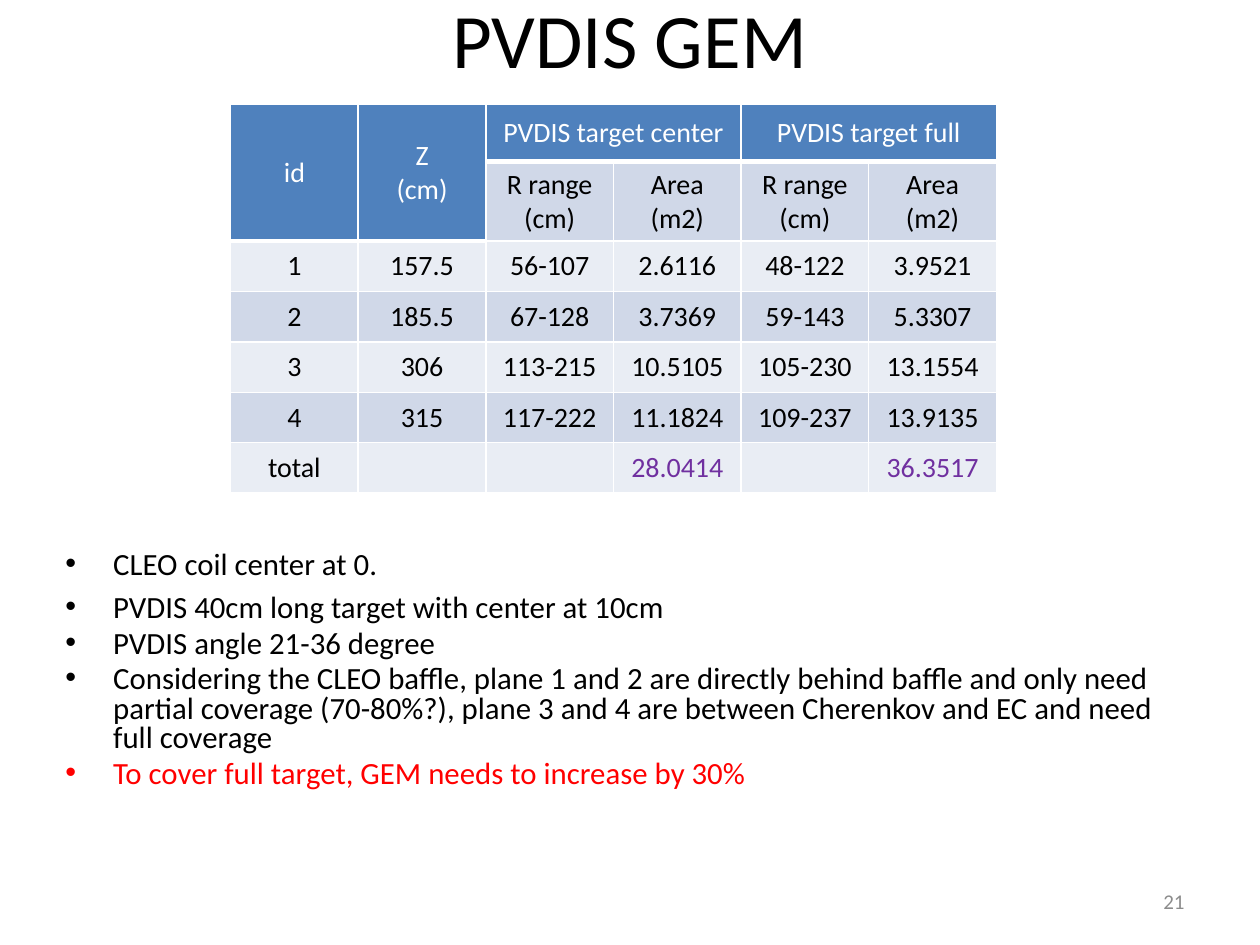
from lxml import etree
from pptx import Presentation
from pptx.dml.color import RGBColor
from pptx.enum import text
from pptx.oxml import ns
from pptx.util import Inches, Pt

BLACK = RGBColor(0, 0, 0)
WHITE = RGBColor(255, 255, 255)
BLUE = RGBColor(0x4F, 0x81, 0xBD)
DARK = RGBColor(0xD0, 0xD8, 0xE8)
LIGHT = RGBColor(0xE9, 0xED, 0xF4)
PURPLE = RGBColor(0x70, 0x30, 0xA0)
RED = RGBColor(255, 0, 0)
GREY = RGBColor(0x8C, 0x8C, 0x8C)
MID = text.MSO_ANCHOR.MIDDLE
ALIGN = text.PP_ALIGN


def write(frame, lines, size, color, align):
    """Fill a text frame with one paragraph per line."""
    for i, line in enumerate(lines):
        para = frame.paragraphs[0] if i == 0 else frame.add_paragraph()
        para.alignment = align
        run = para.add_run()
        run.text = line
        run.font.name = "Calibri"
        run.font.size = Pt(size)
        run.font.bold = False
        run.font.color.rgb = color


def add_box(left, top, width, height, anchor):
    box = slide.shapes.add_textbox(Inches(left), Inches(top), Inches(width), Inches(height))
    frame = box.text_frame
    frame.word_wrap = True
    frame.vertical_anchor = anchor
    return frame


prs = Presentation()
prs.slide_width, prs.slide_height = Inches(10), Inches(7.5)
slide = prs.slides.add_slide(prs.slide_layouts[6])

title = add_box(0.5, -0.33, 9, 1.25, MID)
write(title, ["PVDIS GEM"], 44, BLACK, ALIGN.CENTER)

# Table of detector planes
units = ["R range\n(cm)", "Area\n(m2)"]
rows = [
    ["id", "Z\n(cm)", "PVDIS target center", "", "PVDIS target full", ""],
    ["", ""] + units * 2,
    ["1", "157.5", "56-107", "2.6116", "48-122", "3.9521"],
    ["2", "185.5", "67-128", "3.7369", "59-143", "5.3307"],
    ["3", "306", "113-215", "10.5105", "105-230", "13.1554"],
    ["4", "315", "117-222", "11.1824", "109-237", "13.9135"],
    ["total", "", "", "28.0414", "", "36.3517"],
]
heights = [0.45, 0.63] + [0.4] * 5
table = slide.shapes.add_table(
    len(rows), 6, Inches(1.83), Inches(0.83), Inches(6.08), Inches(sum(heights))
).table
for col in table.columns:
    col.width = Inches(6.08 / 6)
for row, height in zip(table.rows, heights):
    row.height = Inches(height)

for r, row in enumerate(rows):
    for c, words in enumerate(row):
        cell = table.cell(r, c)
        cell.vertical_anchor = MID
        head = r == 0 or (r == 1 and c < 2)
        color = WHITE if head else PURPLE if r == 6 and c > 0 else BLACK
        if words:
            write(cell.text_frame, words.split("\n"), 16, color, ALIGN.CENTER)
        props = cell._tc.get_or_add_tcPr()
        for side in "LRTB":
            width = Pt(3 if r == 0 and side == "B" else 1)
            line = etree.SubElement(props, ns.qn("a:ln" + side), w=str(width))
            fill = etree.SubElement(line, ns.qn("a:solidFill"))
            etree.SubElement(fill, ns.qn("a:srgbClr"), val=str(WHITE))
        cell.fill.solid()
        cell.fill.fore_color.rgb = BLUE if head else DARK if r % 2 else LIGHT

for c in (0, 1):
    table.cell(0, c).merge(table.cell(1, c))
for c in (2, 4):
    table.cell(0, c).merge(table.cell(0, c + 1))

# Bulleted notes
notes = [
    "CLEO coil center at 0.",
    "PVDIS 40cm long target with center at 10cm",
    "PVDIS angle 21-36 degree",
    "Considering the CLEO baffle, plane 1 and 2 are directly behind baffle and only "
    "need partial coverage (70-80%?), plane 3 and 4 are between Cherenkov and EC and "
    "need full coverage",
    "To cover full target, GEM needs to increase by 30%",
]
body = add_box(0.42, 4.33, 9, 2.08, text.MSO_ANCHOR.TOP)
write(body, notes, 17.6, BLACK, ALIGN.LEFT)
for i, para in enumerate(body.paragraphs):
    para.line_spacing = 1.0 if i == 1 else 0.8
    para.space_before = Pt(3.5)
    props = para._p.get_or_add_pPr()
    props.set("marL", str(Inches(0.38)))
    props.set("indent", str(-Inches(0.38)))
    etree.SubElement(props, ns.qn("a:buFont"), typeface="Arial")
    etree.SubElement(props, ns.qn("a:buChar"), char="•")
body.paragraphs[-1].runs[0].font.color.rgb = RED

number = add_box(7.17, 6.95, 2.33, 0.4, MID)
write(number, ["21"], 12, GREY, ALIGN.RIGHT)

prs.save("out.pptx")
